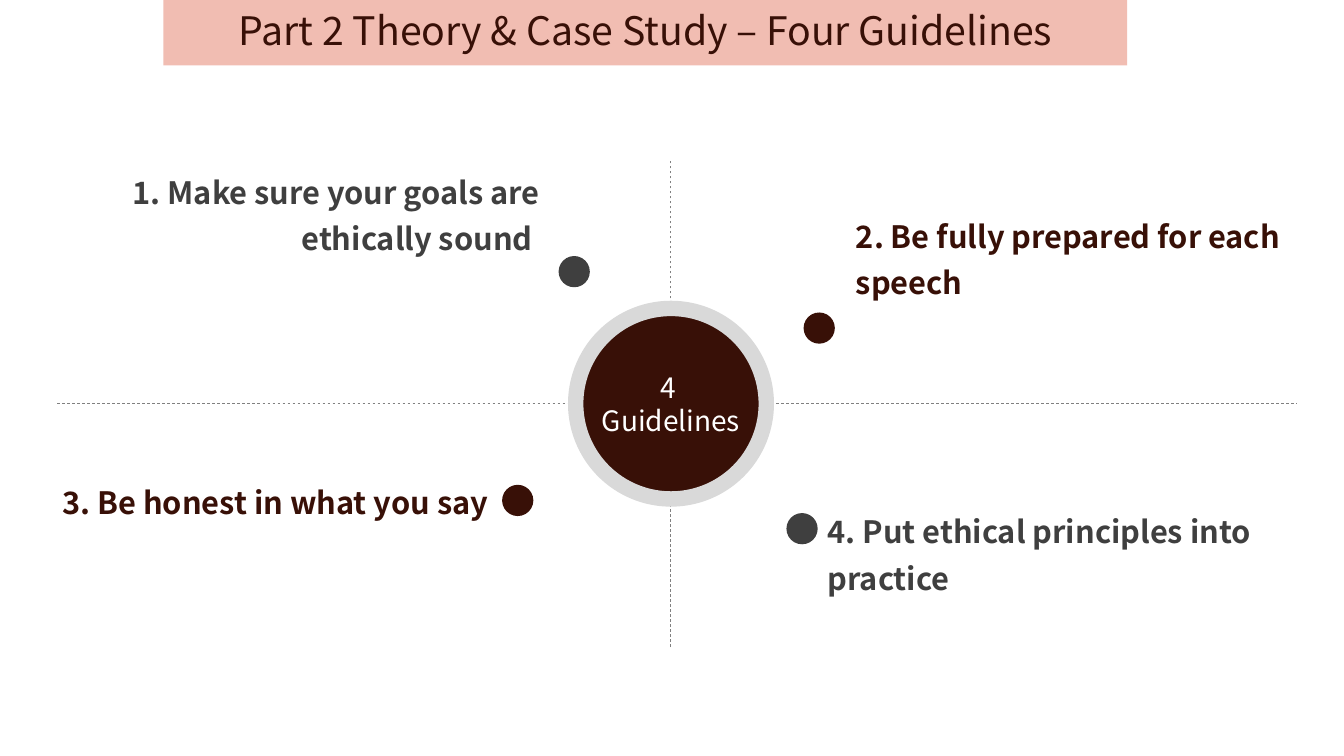
from lxml import etree
from pptx import Presentation
from pptx.dml.color import RGBColor
from pptx.enum.dml import MSO_LINE
from pptx.enum.shapes import MSO_CONNECTOR, MSO_SHAPE
from pptx.enum.text import MSO_ANCHOR, MSO_AUTO_SIZE, PP_ALIGN
from pptx.oxml.ns import qn
from pptx.util import Inches, Pt

STRAIGHT = MSO_CONNECTOR.STRAIGHT
OVAL = MSO_SHAPE.OVAL
DASH = MSO_LINE.DASH
MIDDLE = MSO_ANCHOR.MIDDLE
GROW = MSO_AUTO_SIZE.SHAPE_TO_FIT_TEXT
LEFT, CENTER, RIGHT = PP_ALIGN.LEFT, PP_ALIGN.CENTER, PP_ALIGN.RIGHT

FONT = "Noto Sans CJK SC"
MAROON, CHARCOAL, WHITE = "381007", "3F3F3F", "FFFFFF"
PINK, SILVER, GRAY = "E99280", "D9D9D9", "808080"
DOT_SIZE = 0.31

AXES = [
    (7.6, 4, 12.86, 4),
    (0.57, 4, 5.71, 4),
    (6.65, 3.06, 6.65, 1.58),
    (6.65, 6.42, 6.65, 4.95),
]
GUIDELINES = [
    ("1. Make sure your goals are ethically sound ", CHARCOAL, RIGHT, (0.83, 1.58), 1.4, (5.54, 2.54)),
    ("2. Be fully prepared for each speech", MAROON, LEFT, (8.39, 2.02), 1.4, (7.97, 3.1)),
    ("3. Be honest in what you say", MAROON, RIGHT, (0.32, 4.66), 0.94, (4.98, 4.81)),
    ("4. Put ethical principles into practice", CHARCOAL, LEFT, (8.11, 4.95), 1.4, (7.8, 5.09)),
]


def rgb(color):
    return RGBColor.from_string(color)


def fill_solid(shape, color):
    shape.fill.solid()
    shape.fill.fore_color.rgb = rgb(color)


def write(tf, text, size, color, align, spacing=None, bold=False):
    tf.text = text
    for p in tf.paragraphs:
        p.alignment = align
        p.line_spacing = spacing
        for r in p.runs:
            r.font.name = FONT
            r.font.size = Pt(size)
            r.font.bold = bold
            r.font.color.rgb = rgb(color)


def add_title(s, text):
    title = s.shapes.title
    title.left, title.top = Inches(1.62), Inches(0)
    title.width, title.height = Inches(9.56), Inches(0.65)
    fill_solid(title, PINK)
    color = title.fill._xPr.find(".//" + qn("a:srgbClr"))
    etree.SubElement(color, qn("a:alpha"), val="60000")
    tf = title.text_frame
    tf.word_wrap = False
    tf.auto_size = MSO_AUTO_SIZE.NONE
    tf.vertical_anchor = MIDDLE
    write(tf, text, 28, MAROON, CENTER, 0.9)


def add_axis(s, x1, y1, x2, y2):
    axis = s.shapes.add_connector(STRAIGHT, Inches(x1), Inches(y1), Inches(x2), Inches(y2))
    axis.line.color.rgb = rgb(GRAY)
    axis.line.width = Pt(0.5)
    axis.line.dash_style = DASH
    etree.SubElement(axis._element.spPr, qn("a:effectLst"))


def add_circle(s, x, y, size, color):
    circle = s.shapes.add_shape(OVAL, Inches(x), Inches(y), Inches(size), Inches(size))
    circle.shadow.inherit = False
    fill_solid(circle, color)
    circle.line.fill.background()
    return circle


def add_hub(s, text):
    hub = add_circle(s, 5.71, 3.06, 1.89, MAROON)
    hub.line.color.rgb = rgb(SILVER)
    hub.line.width = Pt(11)
    tf = hub.text_frame
    tf.word_wrap = False
    tf.vertical_anchor = MIDDLE
    write(tf, text, 20, WHITE, CENTER)


def add_guideline(s, text, color, align, corner, height, dot):
    x, y = corner
    box = s.shapes.add_textbox(Inches(x), Inches(y), Inches(4.62), Inches(height))
    tf = box.text_frame
    tf.word_wrap = True
    tf.auto_size = GROW
    write(tf, text, 22, color, align, 1.25, True)
    add_circle(s, *dot, DOT_SIZE, color)


def main():
    prs = Presentation()
    prs.slide_width, prs.slide_height = Inches(13.33), Inches(7.5)
    s = prs.slides.add_slide(prs.slide_layouts[5])
    add_title(s, "Part 2 Theory & Case Study – Four Guidelines")
    for axis in AXES:
        add_axis(s, *axis)
    add_hub(s, "4 \nGuidelines")
    for guideline in GUIDELINES:
        add_guideline(s, *guideline)
    prs.save("out.pptx")


if __name__ == "__main__":
    main()
